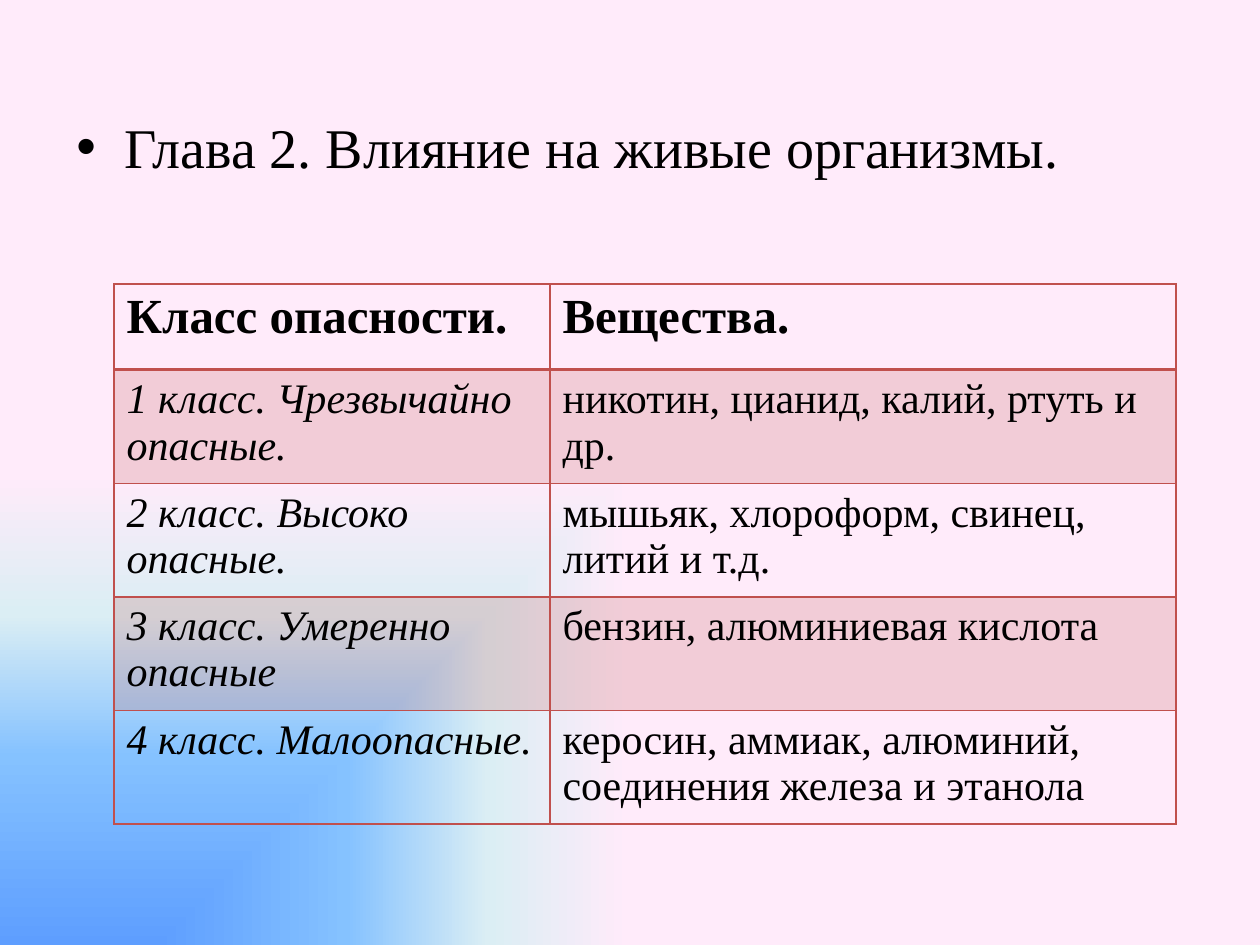
from lxml.etree import SubElement
from pptx import Presentation
from pptx.dml.color import RGBColor
from pptx.oxml import parse_xml
from pptx.oxml.ns import nsdecls, qn
from pptx.util import Emu, Pt

SCALE = 914400 // 126  # EMU in one px
FONT = "Times New Roman"
BLACK, RED = "000000", "C0504D"
# Position, colour and opacity, all in percent
GRADIENT = [(0, "5E9EFF", 100), (40, "85C2FF", 100), (70, "DBEEF4", 82), (100, "FFEBFA", 100)]
COLUMN_WIDTHS = [436, 626]
ROW_HEIGHTS = [86, 113, 86, 86, 86]
HAZARDS = [
    ("Класс опасности.", "Вещества."),
    ("1 класс. Чрезвычайно опасные.", "никотин, цианид, калий, ртуть и др."),
    ("2 класс. Высоко опасные.", "мышьяк, хлороформ, свинец, литий и т.д."),
    ("3 класс. Умеренно опасные", "бензин, алюминиевая кислота"),
    ("4 класс. Малоопасные.", "керосин, аммиак, алюминий, соединения железа и этанола"),
]


def px(length):
    return Emu(length * SCALE)


def color(value):
    return RGBColor.from_string(value)


def style_text(paragraph, size, bold=False, italic=False):
    font = paragraph.font
    font.name, font.size = FONT, Pt(size)
    font.bold, font.italic = bold, italic
    font.color.rgb = color(BLACK)


def set_background(slide):
    stops = "".join(
        f'<a:gs pos="{pos * 1000}"><a:srgbClr val="{value}">'
        f'<a:alpha val="{opacity * 1000}"/></a:srgbClr></a:gs>'
        for pos, value, opacity in GRADIENT
    )
    background = parse_xml(
        f'<p:bg {nsdecls("p", "a")}><p:bgPr><a:gradFill rotWithShape="1">'
        f'<a:gsLst>{stops}</a:gsLst><a:path path="rect">'
        '<a:fillToRect t="100000" r="100000"/></a:path></a:gradFill>'
        '<a:effectLst/></p:bgPr></p:bg>'
    )
    slide.element.cSld.insert(0, background)


def add_heading(slide, text):
    frame = slide.shapes.add_textbox(px(64), px(106), px(1134), px(624)).text_frame
    frame.word_wrap = True
    heading = frame.paragraphs[0]
    heading.text = text
    heading.space_before = Pt(6.4)
    style_text(heading, 32)
    # Hanging bullet
    props = heading._p.get_or_add_pPr()
    props.set("marL", str(px(48)))
    props.set("indent", str(-px(48)))
    bullet_font = SubElement(props, qn("a:buFont"))
    bullet_font.set("typeface", "Arial")
    SubElement(props, qn("a:buChar")).set("char", "•")
    # The bullet belongs before the paragraph's default run properties
    props.append(props.find(qn("a:defRPr")))


def set_borders(cell, top, bottom):
    props = cell._tc.get_or_add_tcPr()
    for side, width in (("L", 1), ("R", 1), ("T", top), ("B", bottom)):
        line = SubElement(props, qn(f"a:ln{side}"), w=str(Pt(width)))
        fill = SubElement(line, qn("a:solidFill"))
        SubElement(fill, qn("a:srgbClr"), val=RED)


def fill_cell(cell, banded):
    if not banded:
        cell.fill.background()
        return
    cell.fill.solid()
    cell.fill.fore_color.rgb = color(RED)
    tint = cell._tc.tcPr.find(qn("a:solidFill")).find(qn("a:srgbClr"))
    SubElement(tint, qn("a:alpha"), val="20000")


def add_hazard_table(slide):
    table = slide.shapes.add_table(
        len(HAZARDS), len(COLUMN_WIDTHS), px(114), px(284),
        px(sum(COLUMN_WIDTHS)), px(sum(ROW_HEIGHTS)),
    ).table
    table.horz_banding = False
    table.first_row = False
    for column, width in zip(table.columns, COLUMN_WIDTHS):
        column.width = px(width)
    for row, height in zip(table.rows, ROW_HEIGHTS):
        row.height = px(height)

    for r, texts in enumerate(HAZARDS):
        header = r == 0
        for c, text in enumerate(texts):
            cell = table.cell(r, c)
            cell.text = text
            style_text(cell.text_frame.paragraphs[0], 28 if header else 24,
                       bold=header, italic=not header and c == 0)
            # A thicker rule separates the header from the classes
            set_borders(cell, top=2 if r == 1 else 1, bottom=2 if header else 1)
            fill_cell(cell, banded=r % 2 == 1)


def main():
    deck = Presentation()
    deck.slide_width, deck.slide_height = px(1260), px(945)
    slide = deck.slides.add_slide(deck.slide_layouts[6])
    set_background(slide)
    add_heading(slide, "Глава 2. Влияние на живые организмы.")
    add_hazard_table(slide)
    deck.save("out.pptx")


if __name__ == "__main__":
    main()
